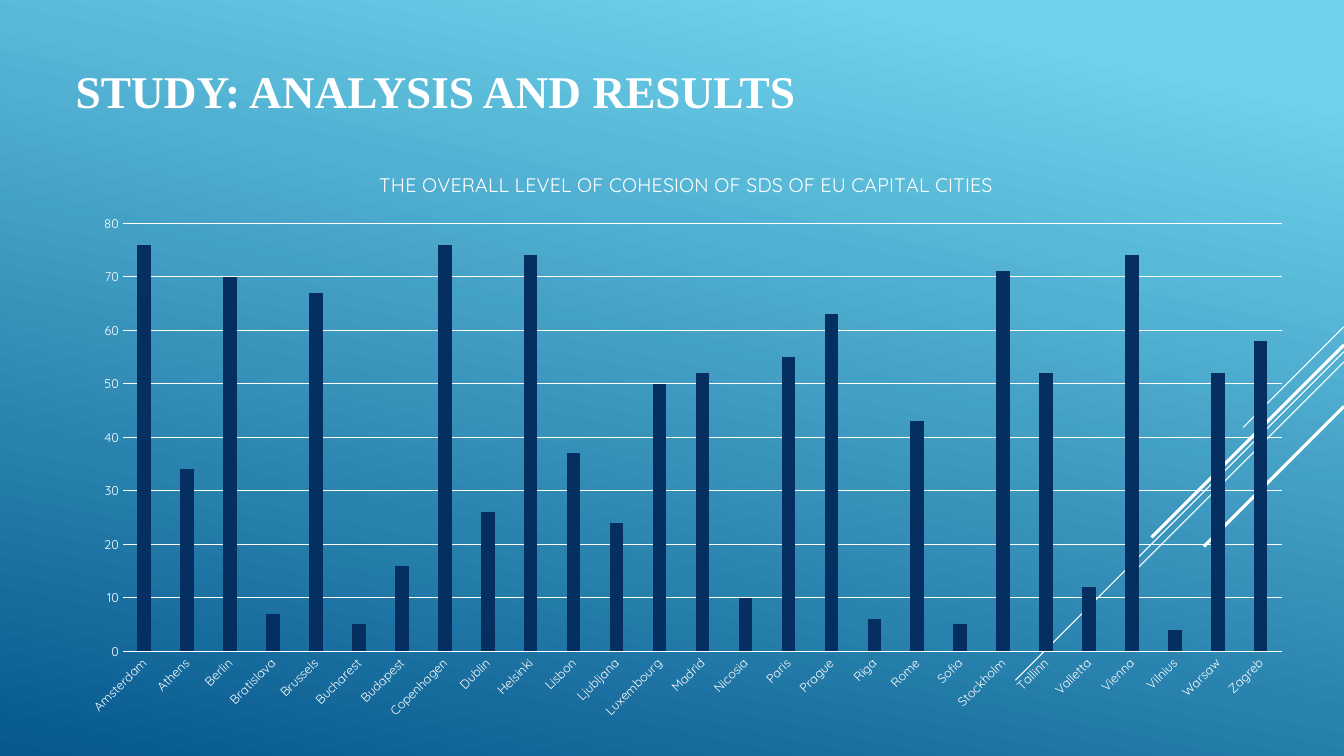
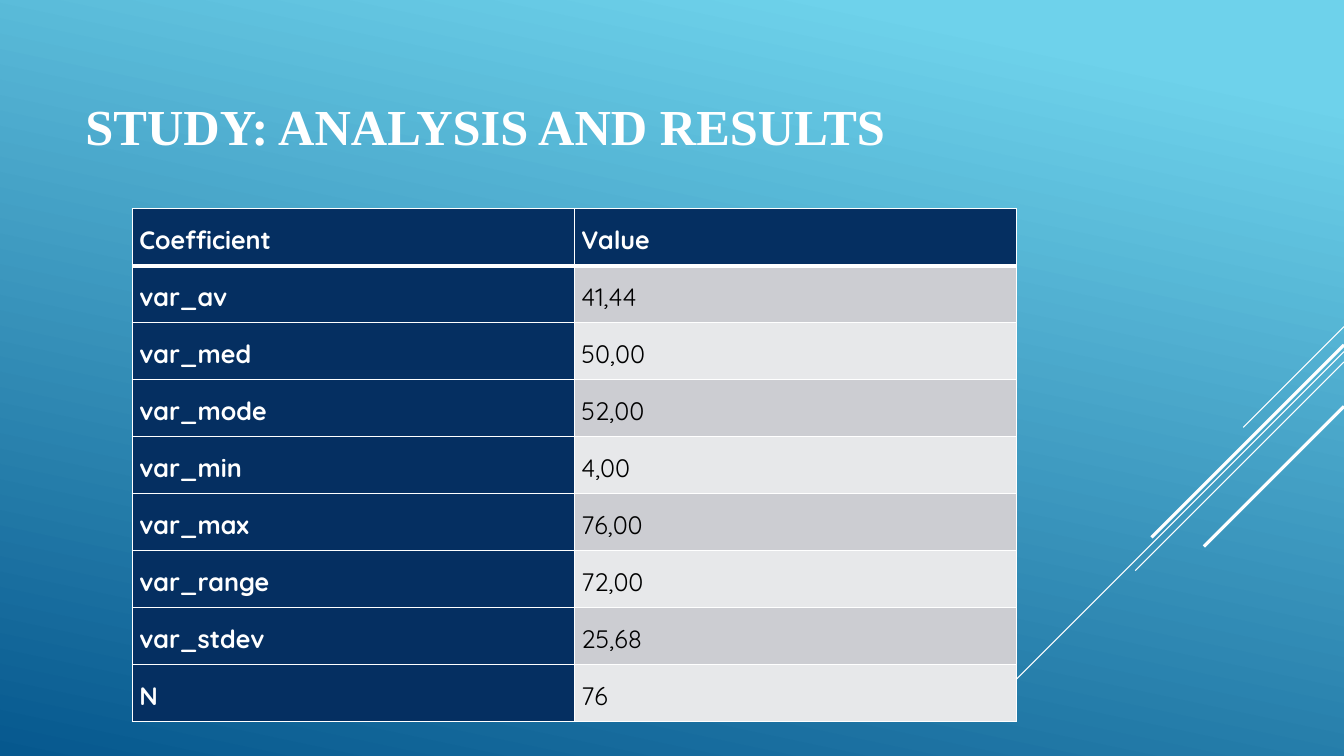
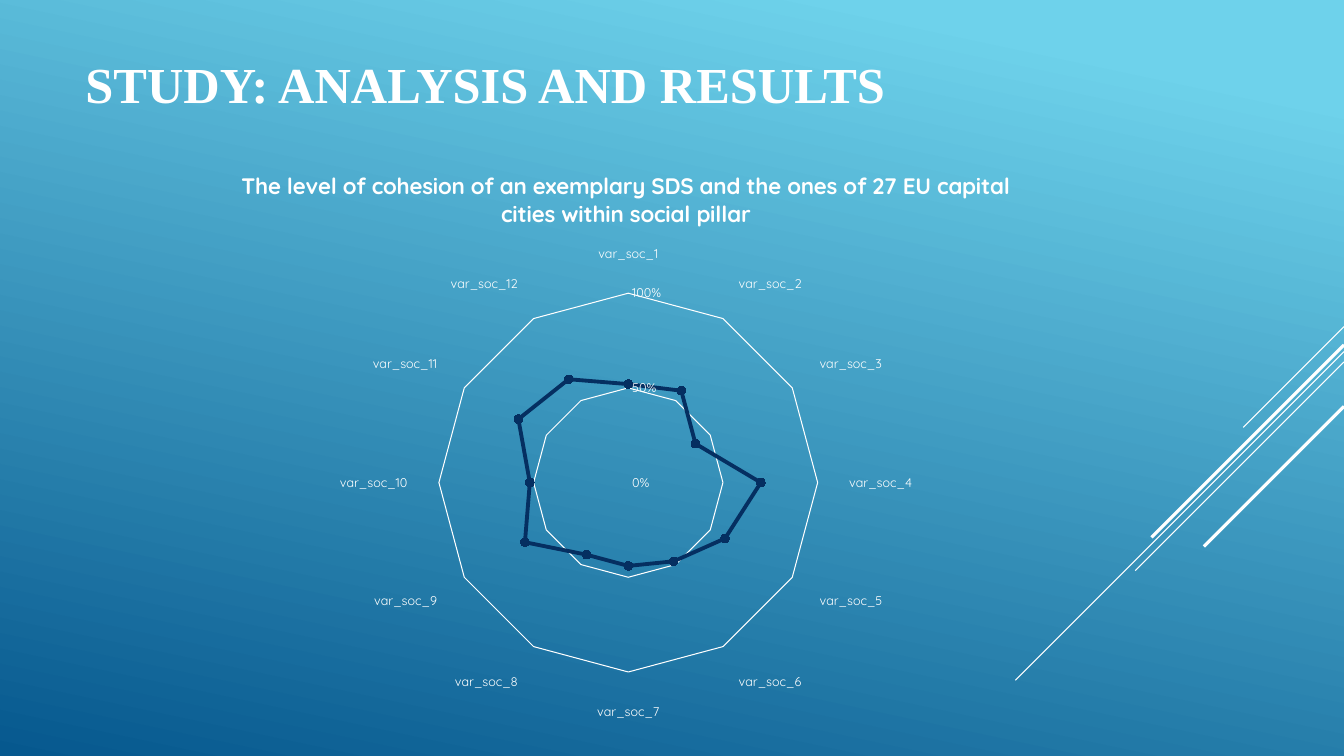
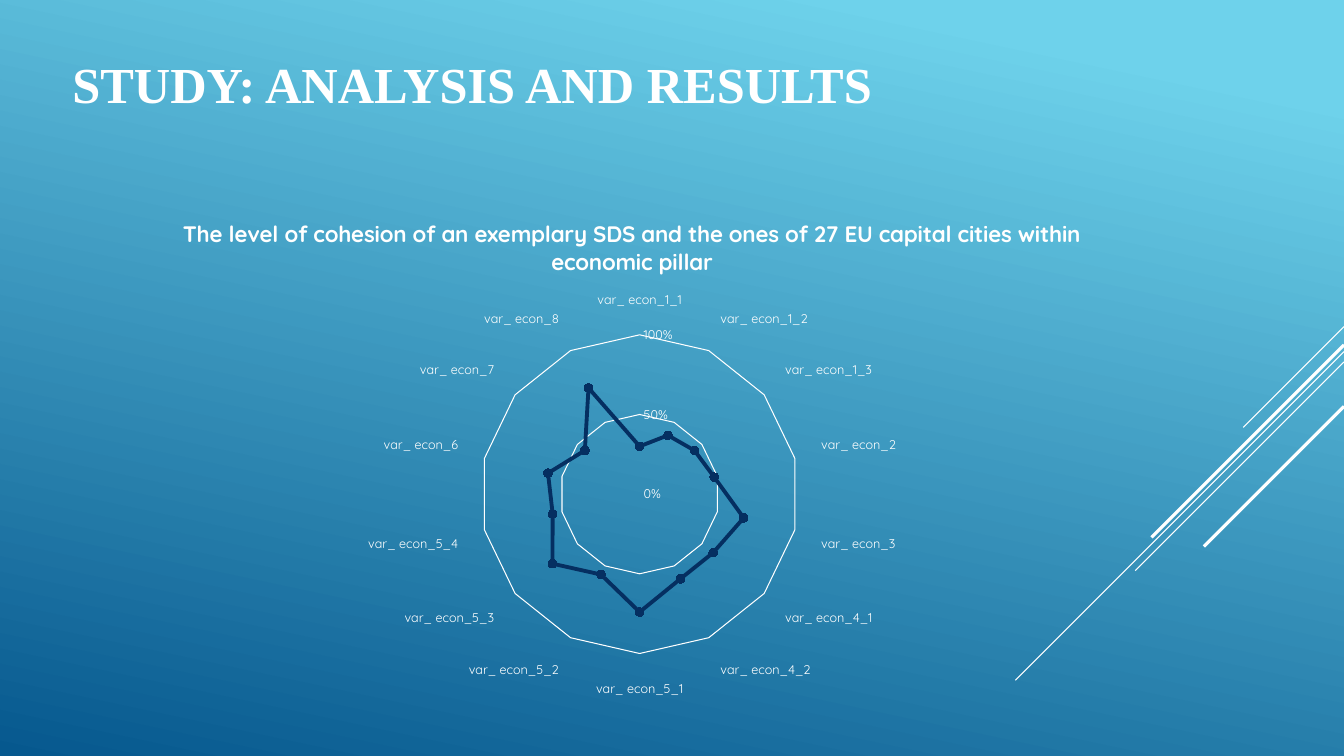
from dataclasses import dataclass

import lxml.etree
import pptx
import pptx.chart.data
import pptx.dml.color
import pptx.enum.chart
import pptx.enum.shapes
import pptx.enum.text
import pptx.oxml
import pptx.oxml.ns
import pptx.util

Cm = pptx.util.Cm
Pt = pptx.util.Pt
Kind = pptx.enum.chart.XL_CHART_TYPE
qn = pptx.oxml.ns.qn

WHITE, BLACK, NAVY = "FFFFFF", "000000", "052F61"
DOT = "002F66"
SKY, DEEP = "6ED2EB", "06588E"
BANDS = ("CCCDD2", "E7E8EA")
SANS, SERIF = "Quicksand", "Times New Roman"
WIDE, HIGH = 33.87, 19.05
HEAD = "STUDY: ANALYSIS AND RESULTS"


@dataclass(frozen=True)
class Box:
    left: float
    top: float
    width: float
    height: float

    def emu(self) -> tuple:
        return Cm(self.left), Cm(self.top), Cm(self.width), Cm(self.height)


@dataclass(frozen=True)
class Ray:
    top: float
    run: float
    width: float


@dataclass(frozen=True)
class Title:
    box: Box
    size: float = 36
    foot: float = 0.13


@dataclass(frozen=True)
class Plot:
    box: Box
    title: str
    size: float
    bold: bool
    kind: Kind
    top: float
    step: float
    style: str
    data: dict


RAYS = (
    Ray(8.23, 2.54, 0.75),
    Ray(8.86, 8.28, 0.75),
    Ray(9.12, 5.26, 0.75),
    Ray(8.69, 4.85, 2.25),
    Ray(10.24, 3.53, 2.25),
)

CITIES = {
    "Amsterdam": 76, "Athens": 34, "Berlin": 70, "Bratislava": 7,
    "Brussels": 67, "Bucharest": 5, "Budapest": 16, "Copenhagen": 76,
    "Dublin": 26, "Helsinki": 74, "Lisbon": 37, "Ljubljana": 24,
    "Luxembourg": 50, "Madrid": 52, "Nicosia": 10, "Paris": 55,
    "Prague": 63, "Riga": 6, "Rome": 43, "Sofia": 5, "Stockholm": 71,
    "Tallinn": 52, "Valletta": 12, "Vienna": 74, "Vilnius": 4,
    "Warsaw": 52, "Zagreb": 58,
}
SOCIAL = {
    f"var_soc_{n}": value
    for n, value in enumerate(
        (0.52, 0.56, 0.41, 0.7, 0.59, 0.48, 0.44, 0.44, 0.63, 0.52, 0.67, 0.63), 1
    )
}
ECON = {
    f"var_ econ_{key}": value
    for key, value in {
        "1_1": 0.3, "1_2": 0.41, "1_3": 0.44, "2": 0.48, "3": 0.67,
        "4_1": 0.59, "4_2": 0.59, "5_1": 0.74, "5_2": 0.56, "5_3": 0.7,
        "5_4": 0.56, "6": 0.59, "7": 0.44, "8": 0.74,
    }.items()
}
STATS = (
    ("Coefficient", "Value"),
    ("var_av", "41,44"),
    ("var_med", "50,00"),
    ("var_mode", "52,00"),
    ("var_min", "4,00"),
    ("var_max", "76,00"),
    ("var_range", "72,00"),
    ("var_stdev", "25,68"),
    ("N", "76"),
)


def color(code: str) -> pptx.dml.color.RGBColor:
    return pptx.dml.color.RGBColor.from_string(code)


def set_font(font, size: float, code: str = WHITE, name: str = SANS, bold: bool = False) -> None:
    font.size, font.name, font.bold = Pt(size), name, bold
    font.color.rgb = color(code)


def set_line(line, code: str, width: float) -> None:
    line.color.rgb = color(code)
    line.width = Pt(width)


def set_fill(fill, code: str) -> None:
    fill.solid()
    fill.fore_color.rgb = color(code)


def paint(master) -> None:
    fill = master.background.fill
    fill.gradient()
    fill.gradient_angle = 258
    for stop, code, place in zip(fill.gradient_stops, (SKY, DEEP), (0.1, 1)):
        stop.color.rgb = color(code)
        stop.position = place


def add_rays(slide, layout) -> None:
    for ray in RAYS:
        line = slide.shapes.add_connector(
            pptx.enum.shapes.MSO_CONNECTOR.STRAIGHT,
            Cm(WIDE), Cm(ray.top), Cm(WIDE - ray.run), Cm(ray.top + ray.run),
        )
        set_line(line.line, WHITE, ray.width)
        lxml.etree.SubElement(line.element.spPr, qn("a:effectLst"))
        layout.shapes.element.append(line.element)


def add_slide(deck, layout, title: Title):
    slide = deck.slides.add_slide(layout)
    shape = slide.shapes.title
    shape.left, shape.top, shape.width, shape.height = title.box.emu()
    frame = shape.text_frame
    frame.text = HEAD
    frame.word_wrap = True
    frame.auto_size = pptx.enum.text.MSO_AUTO_SIZE.NONE
    frame.vertical_anchor = pptx.enum.text.MSO_ANCHOR.MIDDLE
    frame.margin_bottom = Cm(title.foot)
    para = frame.paragraphs[0]
    para.alignment = pptx.enum.text.PP_ALIGN.LEFT
    set_font(para.font, title.size, name=SERIF, bold=True)
    return slide


def add_plot(slide, plot: Plot) -> None:
    data = pptx.chart.data.CategoryChartData(number_format=plot.style)
    data.categories = list(plot.data)
    data.add_series("Series 1", list(plot.data.values()))
    chart = slide.shapes.add_chart(plot.kind, *plot.box.emu(), data).chart
    set_font(chart.font, 10)
    chart.has_legend = False
    chart.has_title = True
    chart.chart_title.include_in_layout = False
    frame = chart.chart_title.text_frame
    frame.text = plot.title
    set_font(frame.paragraphs[0].font, plot.size, bold=plot.bold)

    cat, val = chart.category_axis, chart.value_axis
    for axis in (cat, val):
        axis.major_tick_mark = axis.minor_tick_mark = pptx.enum.chart.XL_TICK_MARK.NONE
        set_font(axis.tick_labels.font, 9)
    val.minimum_scale, val.maximum_scale, val.major_unit = 0, plot.top, plot.step
    val.tick_labels.number_format = plot.style
    val.tick_labels.number_format_is_linked = False
    val.format.line.fill.background()
    set_line(val.major_gridlines.format.line, WHITE, 0.75)

    group = chart.plots[0]
    group.vary_by_categories = False
    series = group.series[0]
    if plot.kind == Kind.COLUMN_CLUSTERED:
        set_line(cat.format.line, WHITE, 0.75)
        cat._element.txPr.find(qn("a:bodyPr")).set("rot", "-2700000")
        group.gap_width, group.overlap = 219, -27
        set_fill(series.format.fill, NAVY)
    else:
        set_line(cat.format.line, WHITE, 1)
        set_line(cat.major_gridlines.format.line, WHITE, 0.75)
        series.smooth = False
        set_line(series.format.line, NAVY, 2.75)
        mark = series.marker
        mark.style, mark.size = pptx.enum.chart.XL_MARKER_STYLE.CIRCLE, 6
        set_fill(mark.format.fill, DOT)
        set_line(mark.format.line, DOT, 0.75)


def set_edges(cell, row: int) -> None:
    props = cell._tc.get_or_add_tcPr()
    widths = {"L": 1, "R": 1, "T": 3 if row == 1 else 1, "B": 3 if row == 0 else 1}
    for place, (side, width) in enumerate(widths.items()):
        edge = pptx.oxml.parse_xml(
            f'<a:ln{side} xmlns:a="http://schemas.openxmlformats.org/drawingml/2006/main" '
            f'w="{Pt(width)}"><a:solidFill><a:srgbClr val="{WHITE}"/></a:solidFill></a:ln{side}>'
        )
        props.insert(place, edge)


def add_stats(slide, box: Box) -> None:
    table = slide.shapes.add_table(len(STATS), 2, *box.emu()).table
    table.horz_banding = False
    for row, texts in enumerate(STATS):
        for col, text in enumerate(texts):
            dark = row == 0 or col == 0
            cell = table.cell(row, col)
            cell.text = text
            cell.margin_left = cell.margin_right = Cm(0.18)
            cell.margin_top = cell.margin_bottom = 0
            para = cell.text_frame.paragraphs[0]
            para.alignment = pptx.enum.text.PP_ALIGN.JUSTIFY
            para.line_spacing, para.space_after = 1.5, Pt(8)
            set_font(para.font, 18, WHITE if dark else BLACK, bold=dark)
            set_fill(cell.fill, NAVY if dark else BANDS[(row - 1) % 2])
            set_edges(cell, row)


def radar(box: Box, pillar: str, data: dict) -> Plot:
    text = (
        "The level of cohesion of an exemplary SDS and the ones of "
        f"27 EU capital cities within {pillar} pillar"
    )
    return Plot(box, text, 16, True, Kind.RADAR_MARKERS, 1, 0.5, "0%", data)


def main() -> None:
    deck = pptx.Presentation()
    deck.slide_width, deck.slide_height = Cm(WIDE), Cm(HIGH)
    layout = deck.slide_layouts[5]
    paint(deck.slide_master)

    slide = add_slide(deck, layout, Title(Box(1.65, 1.32, 23.7, 3.18), 32.4, 1.4))
    add_rays(slide, layout)
    add_plot(slide, Plot(
        Box(1.65, 3.78, 31.29, 14.63),
        "THE OVERALL LEVEL OF COHESION OF SDS OF EU CAPITAL CITIES",
        14, False, Kind.COLUMN_CLUSTERED, 80, 10, "General", CITIES,
    ))

    slide = add_slide(deck, layout, Title(Box(1.9, 1.07, 23.7, 4.19)))
    add_stats(slide, Box(3.33, 5.26, 22.28, 12.93))

    slide = add_slide(deck, layout, Title(Box(1.9, 0, 23.7, 4.19)))
    add_plot(slide, radar(Box(3.28, 3.76, 24.99, 14.66), "social", SOCIAL))

    slide = add_slide(deck, layout, Title(Box(1.57, 0, 23.7, 4.19)))
    add_plot(slide, radar(Box(0.84, 5, 30.18, 12.8), "economic", ECON))

    deck.save("out.pptx")


if __name__ == "__main__":
    main()
